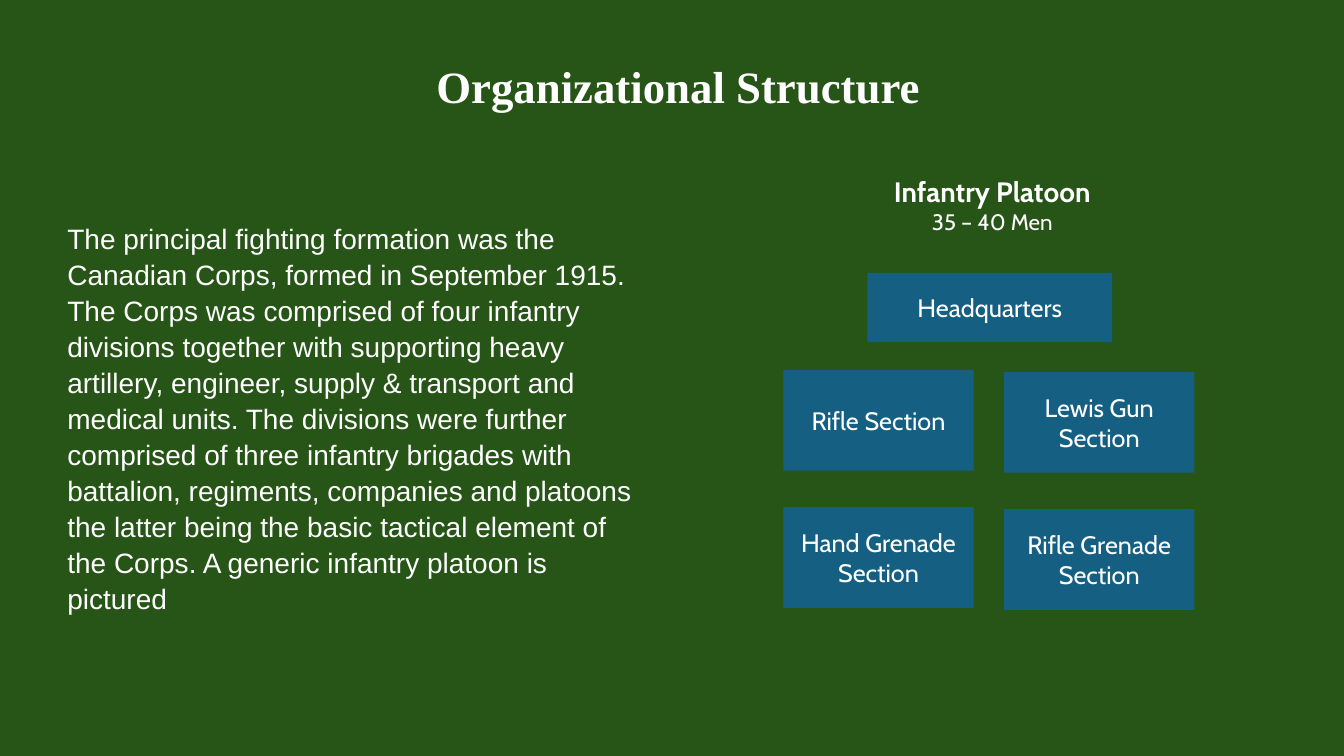
from pptx import Presentation
from pptx.dml.color import RGBColor
from pptx.enum.shapes import MSO_SHAPE as SHAPE
from pptx.enum.text import MSO_ANCHOR as ANCHOR, PP_ALIGN as ALIGN
from pptx.util import Pt

GREEN, BLUE, WHITE = "275417", "156082", "FFFFFF"
TITLE_FONT, BODY_FONT, CHART_FONT = "Times New Roman", "Arial", "Cabin"

BODY = (
    "The principal fighting formation was the Canadian Corps, formed in "
    "September 1915. The Corps was comprised of four infantry divisions "
    "together with supporting heavy artillery, engineer, supply & transport "
    "and medical units. The divisions were further comprised of three "
    "infantry brigades with battalion, regiments, companies and platoons the "
    "latter being the basic tactical element of the Corps. A generic infantry "
    "platoon is pictured"
)
SECTIONS = [
    ["Rifle Section", "Lewis Gun Section"],
    ["Hand Grenade Section", "Rifle Grenade Section"],
]


def rgb(color):
    return RGBColor.from_string(color)


def setup_frame(tf):
    tf.word_wrap = True
    tf.vertical_anchor = ANCHOR.MIDDLE


def write(p, text, font, size, bold=False, align=ALIGN.CENTER, spacing=None):
    p.alignment = align
    if spacing:
        p.line_spacing = spacing
    r = p.add_run()
    r.text = text
    r.font.name, r.font.size, r.font.bold = font, Pt(size), bold
    r.font.color.rgb = rgb(WHITE)


def add_text_frame(s, x, y, w, h):
    tf = s.shapes.add_textbox(Pt(x), Pt(y), Pt(w), Pt(h)).text_frame
    setup_frame(tf)
    return tf


def add_title(s, x, y, w, h):
    tf = add_text_frame(s, x, y, w, h)
    tf.margin_top = tf.margin_bottom = 0
    write(tf.paragraphs[0], "Organizational Structure", TITLE_FONT, 32, bold=True)


def add_body(s, x, y, w, h):
    tf = add_text_frame(s, x, y, w, h)
    write(tf.paragraphs[0], BODY, BODY_FONT, 20, align=ALIGN.LEFT, spacing=1.07)


def add_unit(s, text, x, y, w, h):
    sp = s.shapes.add_shape(SHAPE.RECTANGLE, Pt(x), Pt(y), Pt(w), Pt(h))
    sp.shadow.inherit = False
    sp.fill.solid()
    sp.fill.fore_color.rgb = rgb(BLUE)
    sp.line.fill.background()
    setup_frame(sp.text_frame)
    write(sp.text_frame.paragraphs[0], text, CHART_FONT, 18)


def add_platoon(s, x, y, w, h):
    """Draw the heading, the headquarters and a grid of sections."""
    unit_w, unit_h, right_drop = 136, 72, 1.4
    col_step = w - unit_w
    row_step = 98
    grid_y = y + h - right_drop - unit_h - row_step

    tf = add_text_frame(s, x + 60, y, 178.5, 72)
    write(tf.paragraphs[0], "Infantry Platoon", CHART_FONT, 20, bold=True)
    write(tf.add_paragraph(), "35 – 40 Men", CHART_FONT, 16)

    add_unit(s, "Headquarters", x + 60, y + 85, 175, 49.5)
    for row, names in enumerate(SECTIONS):
        for col, name in enumerate(names):
            add_unit(s, name, x + col * col_step,
                     grid_y + row * row_step + col * right_drop, unit_w, unit_h)


def main():
    prs = Presentation()
    prs.slide_width, prs.slide_height = Pt(960), Pt(540)
    s = prs.slides.add_slide(prs.slide_layouts[6])
    s.background.fill.solid()
    s.background.fill.fore_color.rgb = rgb(GREEN)
    add_title(s, 151, 42, 667, 38)
    add_body(s, 41, 103, 428.5, 390)
    add_platoon(s, 559.5, 110, 293.7, 325.6)
    prs.save("out.pptx")


if __name__ == "__main__":
    main()
